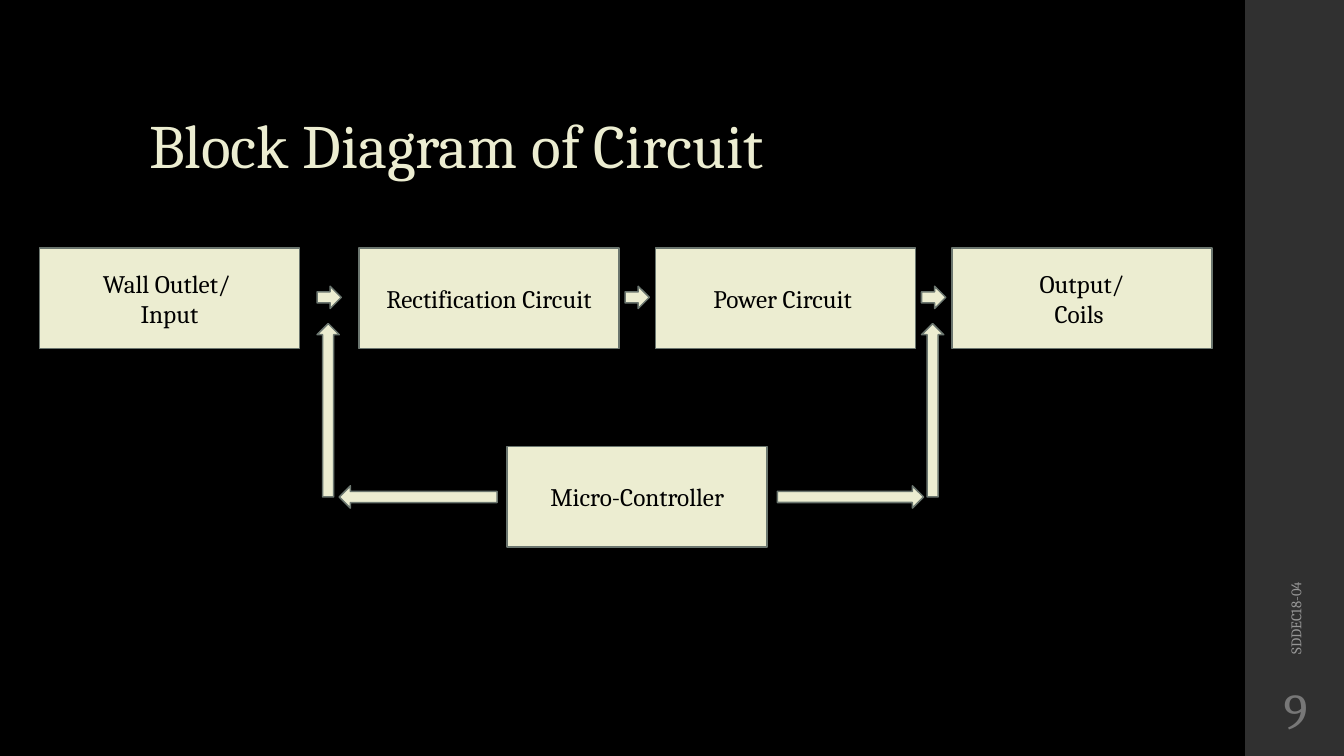
from pptx import Presentation
from pptx.dml.color import RGBColor
from pptx.enum.shapes import MSO_SHAPE as Shape
from pptx.enum.text import MSO_ANCHOR as Anchor, PP_ALIGN as Align
from pptx.util import Inches, Pt

BLACK = RGBColor(0x00, 0x00, 0x00)
CREAM = RGBColor(0xEC, 0xED, 0xD1)
OUTLINE = RGBColor(0x6B, 0x76, 0x6F)
SIDEBAR = RGBColor(0x30, 0x30, 0x30)
NUMBER_GREY = RGBColor(0x77, 0x77, 0x77)
FOOTER_GREY = RGBColor(0x96, 0x96, 0x96)

FONT = "Cambria"
WIDTH, HEIGHT = 13.33, 7.5
SIDEBAR_LEFT, SIDEBAR_WIDTH = 12.35, 1
BLOCK_WIDTH, BLOCK_HEIGHT = 2.58, 1
COLUMN_START, COLUMN_STEP = 0.62, 2.94
INPUT_LEFT = 0.39
TOP_ROW, CONTROL_ROW = 2.96, 4.93  # row centres
ARROW_THICKNESS, SHORT_ARROW = 0.22, 0.24


def column(index):
    """Left edge of a column of blocks; half columns are allowed."""
    return COLUMN_START + index * COLUMN_STEP


def write(box, text, size, color, align=Align.LEFT, anchor=Anchor.MIDDLE, spacing=1.0):
    frame = box.text_frame
    frame.word_wrap = True
    frame.vertical_anchor = anchor
    frame.text = text
    for para in frame.paragraphs:
        para.alignment = align
        para.line_spacing = spacing
        for span in para.runs:
            span.font.name = FONT
            span.font.size = Pt(size)
            span.font.color.rgb = color


def add_filled(page, kind, left, top, width, height, fill=CREAM, outline=OUTLINE):
    shape = page.shapes.add_shape(
        kind, Inches(left), Inches(top), Inches(width), Inches(height))
    shape.shadow.inherit = False
    shape.fill.solid()
    shape.fill.fore_color.rgb = fill
    if outline is None:
        shape.line.fill.background()
    else:
        shape.line.color.rgb = outline
        shape.line.width = Pt(1.1)
    return shape


def add_label(page, left, top, width, height, text, size, color, **layout):
    box = page.shapes.add_textbox(
        Inches(left), Inches(top), Inches(width), Inches(height))
    write(box, text, size, color, **layout)
    return box


def add_block(page, left, row, text):
    block = add_filled(page, Shape.RECTANGLE, left, row - BLOCK_HEIGHT / 2,
                       BLOCK_WIDTH, BLOCK_HEIGHT)
    write(block, text, 18, BLACK, align=Align.CENTER)


def add_arrow(page, center_x, center_y, length, rotation=0):
    arrow = add_filled(page, Shape.RIGHT_ARROW, center_x - length / 2,
                       center_y - ARROW_THICKNESS / 2, length, ARROW_THICKNESS)
    arrow.rotation = rotation


def add_sidebar(page):
    add_filled(page, Shape.RECTANGLE, SIDEBAR_LEFT, 0, SIDEBAR_WIDTH, HEIGHT,
               fill=SIDEBAR, outline=None)
    number = add_label(page, SIDEBAR_LEFT, 6.75, SIDEBAR_WIDTH, 0.65, "9", 36,
                       NUMBER_GREY, align=Align.CENTER, spacing=0.9)
    number.text_frame.margin_left = number.text_frame.margin_right = Inches(0.05)
    footer = add_label(page, 10.89, 4.43, 3.92, 0.4, "SDDEC18-04", 10.5, FOOTER_GREY)
    footer.rotation = 270


def add_diagram(page):
    lefts = [INPUT_LEFT] + [column(index) for index in (1, 2, 3)]
    labels = ["Wall Outlet/ \nInput", "Rectification Circuit",
              "Power Circuit ", "Output/\nCoils "]
    for left, text in zip(lefts, labels):
        add_block(page, left, TOP_ROW, text)
    control_left = column(1.5)
    add_block(page, control_left, CONTROL_ROW, "Micro-Controller")

    gaps = [(left + BLOCK_WIDTH + following) / 2
            for left, following in zip(lefts, lefts[1:])]
    for gap in gaps:
        add_arrow(page, gap, TOP_ROW - 0.01, SHORT_ARROW)

    rise_top = TOP_ROW + 0.25
    for gap in (gaps[0], gaps[-1]):
        add_arrow(page, gap - 0.01, (rise_top + CONTROL_ROW) / 2,
                  CONTROL_ROW - rise_top, rotation=270)

    clearance = 0.1
    left_tip, left_tail = gaps[0] + clearance, control_left - clearance
    right_tail = control_left + BLOCK_WIDTH + clearance
    right_tip = gaps[-1] - clearance
    add_arrow(page, (left_tip + left_tail) / 2, CONTROL_ROW,
              left_tail - left_tip, rotation=180)
    add_arrow(page, (right_tail + right_tip) / 2, CONTROL_ROW, right_tip - right_tail)


def main():
    deck = Presentation()
    deck.slide_width, deck.slide_height = Inches(WIDTH), Inches(HEIGHT)
    page = deck.slides.add_slide(deck.slide_layouts[6])
    page.background.fill.solid()
    page.background.fill.fore_color.rgb = BLACK
    add_sidebar(page)
    add_label(page, 1.38, 0.4, 10.6, 1.45, "Block Diagram of Circuit", 44, CREAM,
              anchor=Anchor.BOTTOM, spacing=0.9)
    add_diagram(page)
    deck.save("out.pptx")


if __name__ == "__main__":
    main()
